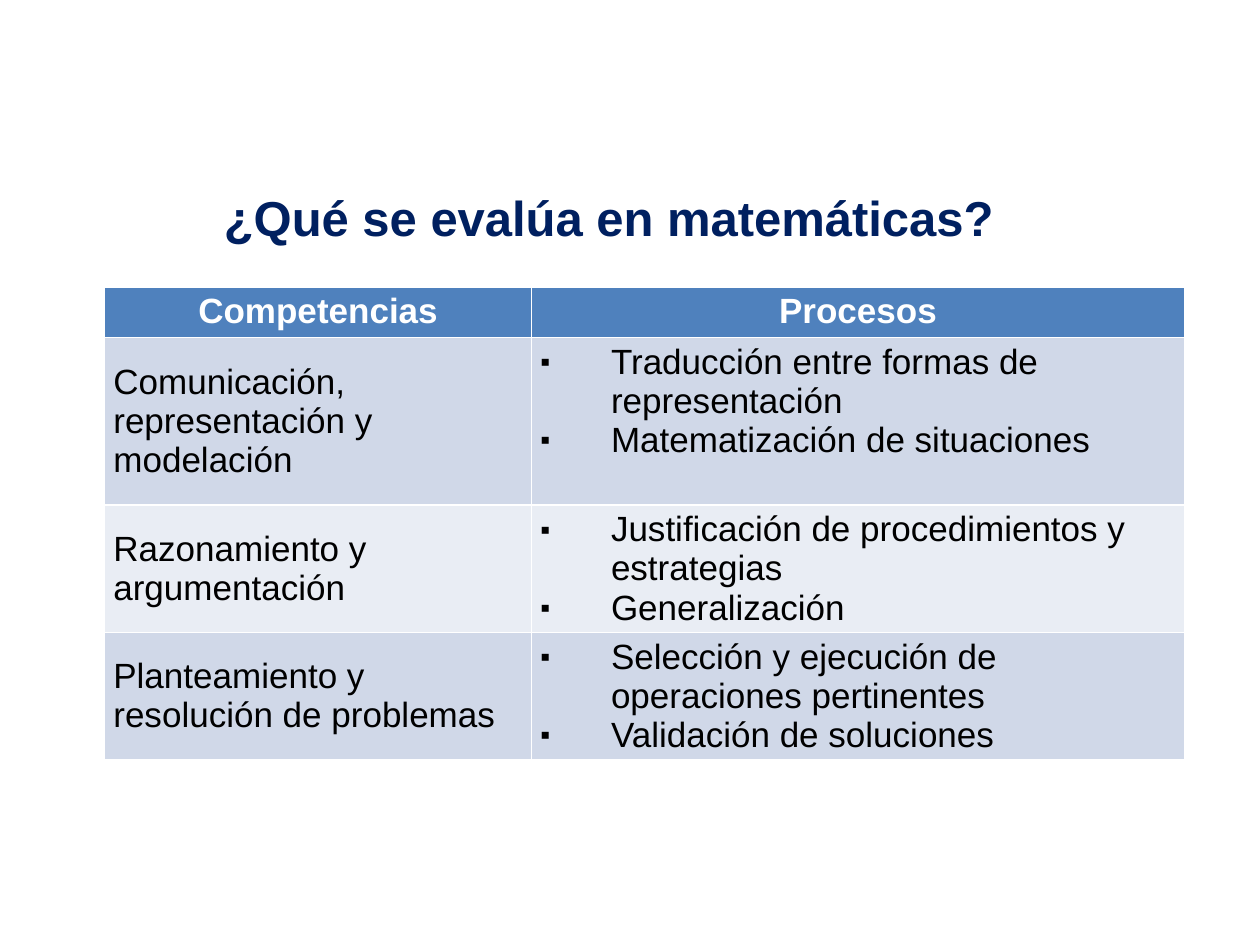
from dataclasses import dataclass

from lxml import etree
from pptx import Presentation
from pptx import util as u
from pptx.dml.color import RGBColor
from pptx.enum import text
from pptx.oxml import ns

WIDTH, HEIGHT = u.Inches(10), u.Inches(7.5)
COLORS = {
    "title": "002060",
    "header": "4F81BD",
    "header_text": "FFFFFF",
    "body_text": "000000",
    "band_dark": "D0D8E8",
    "band_light": "E9EDF4",
}
FONT = "Arial"
COLUMN_SHARES = (0.339, 0.518)
HEADER_SHARE = 0.4 / 7.5
HEADINGS = ("Competencias", "Procesos")


@dataclass
class Competency:
    name: str
    processes: tuple[str, ...]
    height_share: float


COMPETENCIES = (
    Competency(
        "Comunicación, representación y modelación",
        ("Traducción entre formas de representación", "Matematización de situaciones"),
        1.33 / 7.5,
    ),
    Competency(
        "Razonamiento y argumentación",
        ("Justificación de procedimientos y estrategias", "Generalización"),
        1.01 / 7.5,
    ),
    Competency(
        "Planteamiento y resolución de problemas",
        ("Selección y ejecución de operaciones pertinentes", "Validación de soluciones"),
        1.01 / 7.5,
    ),
)


def format_span(span, size: float, color: str, bold: bool = False) -> None:
    span.font.name = FONT
    span.font.size = u.Pt(size)
    span.font.bold = bold
    span.font.color.rgb = RGBColor.from_string(COLORS[color])


def add_bullet(para) -> None:
    properties = para._p.get_or_add_pPr()
    indent = u.Inches(0.56)
    properties.set("marL", str(indent))
    properties.set("indent", str(-indent))
    etree.SubElement(properties, ns.qn("a:buSzPct")).set("val", "80000")
    etree.SubElement(properties, ns.qn("a:buFont")).set("typeface", FONT)
    etree.SubElement(properties, ns.qn("a:buChar")).set("char", "▪")


def fill_cell(cell, lines: tuple[str, ...], fill: str, color: str,
              heading: bool = False, bullets: bool = False) -> None:
    cell.fill.solid()
    cell.fill.fore_color.rgb = RGBColor.from_string(COLORS[fill])
    cell.margin_left = cell.margin_right = u.Inches(0.07)
    cell.margin_top = cell.margin_bottom = u.Inches(0.04)
    centred = not heading and not bullets
    cell.vertical_anchor = text.MSO_ANCHOR.MIDDLE if centred else text.MSO_ANCHOR.TOP
    cell.text_frame.text = "\n".join(lines)
    for para in cell.text_frame.paragraphs:
        if bullets:
            add_bullet(para)
        para.alignment = text.PP_ALIGN.CENTER if heading else text.PP_ALIGN.LEFT
        format_span(para.runs[0], 20, color, heading)


def add_title(page, words: str) -> None:
    box = page.shapes.add_textbox(
        int(WIDTH * 0.13), int(HEIGHT * 0.185), int(WIDTH * 0.717), int(HEIGHT * 0.116))
    frame = box.text_frame
    frame.word_wrap = True
    frame.margin_top = u.Inches(0.1)
    frame.text = words
    para = frame.paragraphs[0]
    para.alignment = text.PP_ALIGN.CENTER
    format_span(para.runs[0], 28, "title", True)


def add_competency_table(page) -> None:
    heights = [HEADER_SHARE] + [item.height_share for item in COMPETENCIES]
    table = page.shapes.add_table(
        len(heights), len(HEADINGS), int(WIDTH * 0.083), int(HEIGHT * 0.304),
        int(WIDTH * sum(COLUMN_SHARES)), int(HEIGHT * sum(heights))).table
    for column, share in zip(table.columns, COLUMN_SHARES):
        column.width = int(WIDTH * share)
    for row, share in zip(table.rows, heights):
        row.height = int(HEIGHT * share)
    for index, heading in enumerate(HEADINGS):
        fill_cell(table.cell(0, index), (heading,), "header", "header_text", heading=True)
    for index, item in enumerate(COMPETENCIES, 1):
        band = "band_dark" if index % 2 else "band_light"
        fill_cell(table.cell(index, 0), (item.name,), band, "body_text")
        fill_cell(table.cell(index, 1), item.processes, band, "body_text", bullets=True)


def main() -> None:
    deck = Presentation()
    deck.slide_width, deck.slide_height = WIDTH, HEIGHT
    page = deck.slides.add_slide(deck.slide_layouts[6])
    add_competency_table(page)
    add_title(page, "¿Qué se evalúa en matemáticas? ")
    deck.save("out.pptx")


if __name__ == "__main__":
    main()
